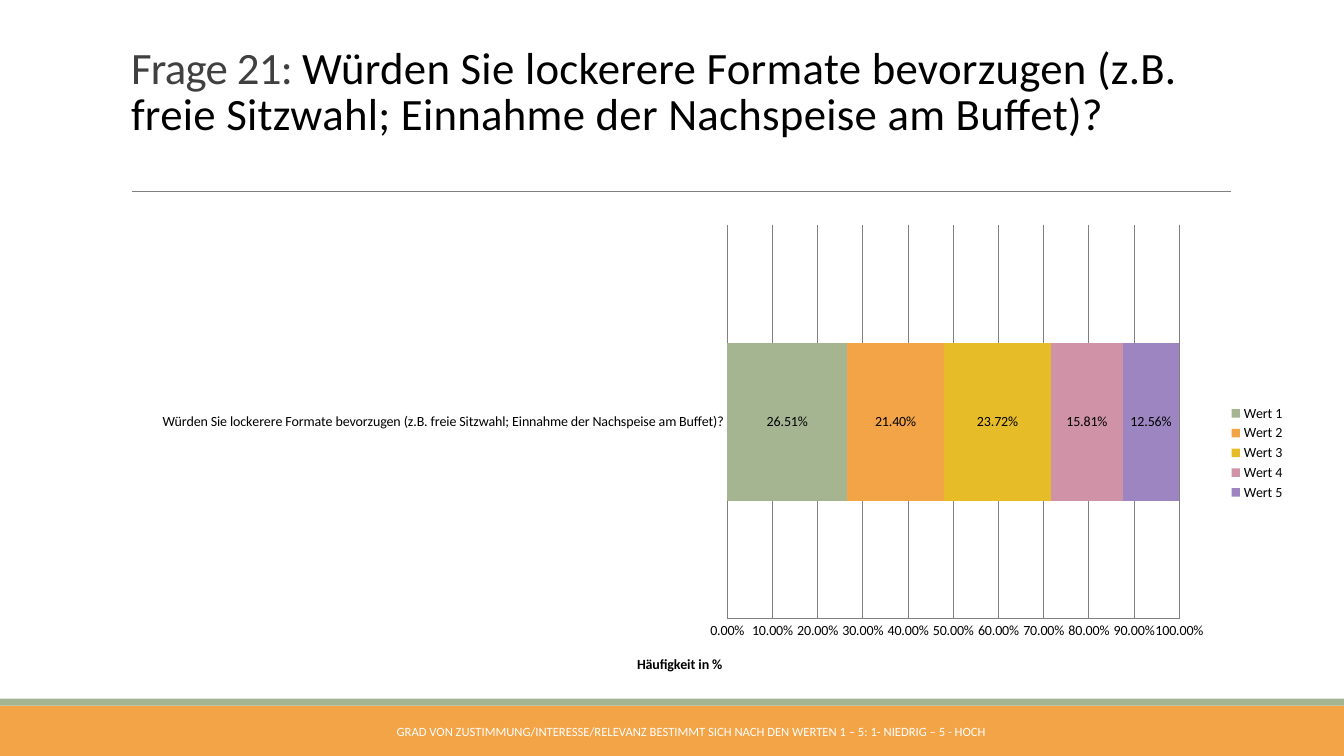
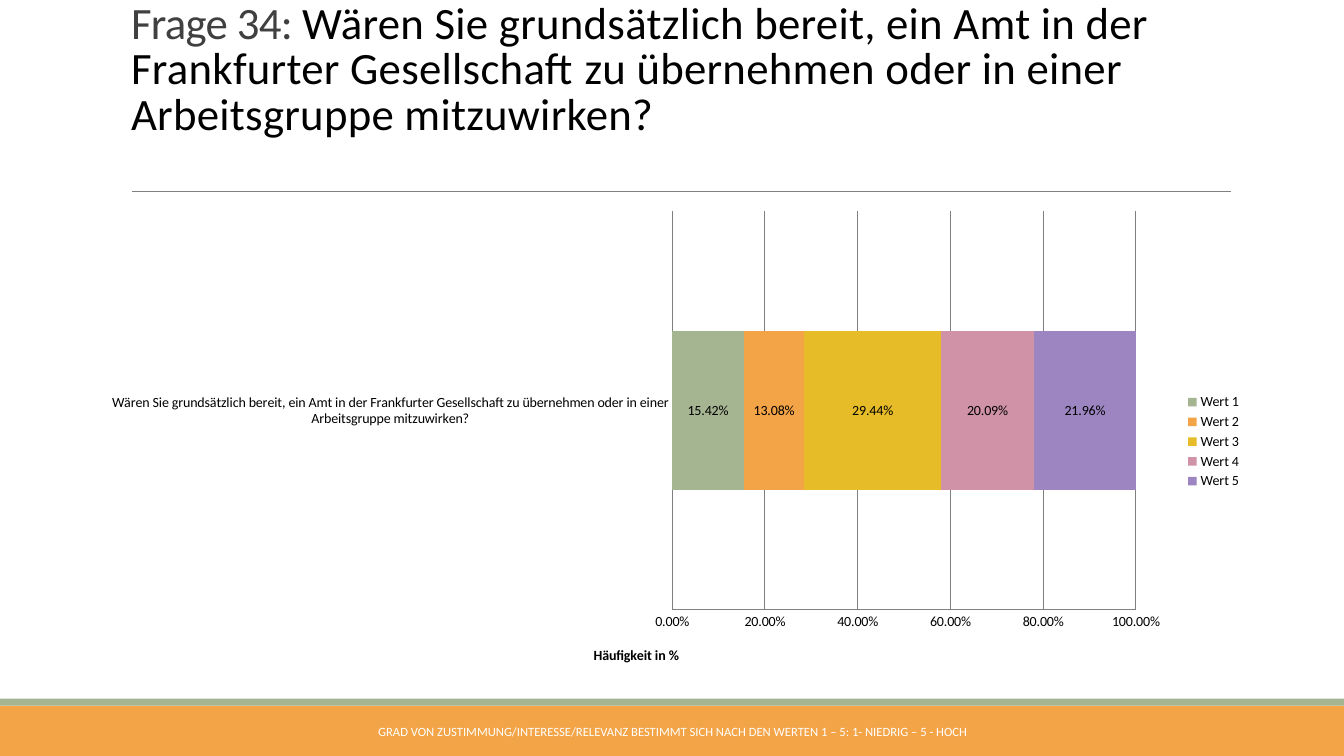
from lxml import etree
from pptx import Presentation
from pptx.chart.data import CategoryChartData
from pptx.dml.color import RGBColor
from pptx.enum.chart import XL_CHART_TYPE, XL_LEGEND_POSITION, XL_TICK_MARK
from pptx.enum.shapes import MSO_CONNECTOR, MSO_SHAPE
from pptx.enum.text import MSO_ANCHOR, MSO_AUTO_SIZE, PP_ALIGN
from pptx.oxml import parse_xml
from pptx.oxml.ns import nsdecls, qn
from pptx.util import Pt

STACKED = XL_CHART_TYPE.BAR_STACKED
RIGHT = XL_LEGEND_POSITION.RIGHT
NO_TICK = XL_TICK_MARK.NONE
RECT = MSO_SHAPE.RECTANGLE
STRAIGHT = MSO_CONNECTOR.STRAIGHT
BOTTOM, MIDDLE = MSO_ANCHOR.BOTTOM, MSO_ANCHOR.MIDDLE
NO_FIT = MSO_AUTO_SIZE.NONE
LEFT, CENTER = PP_ALIGN.LEFT, PP_ALIGN.CENTER

FONT = "Calibri"
WIDE, HIGH = 960, 540
COLORS = {
    "green": "A5B592", "orange": "F3A447", "yellow": "E7BC29",
    "pink": "D092A7", "purple": "9C85C0",
    "black": "000000", "dark": "404040", "gray": "808080", "white": "FFFFFF",
}
BARS = ["green", "orange", "yellow", "pink", "purple"]
NOTE = ("GRAD VON ZUSTIMMUNG/INTERESSE/RELEVANZ BESTIMMT SICH "
        "NACH DEN WERTEN 1 – 5: 1- NIEDRIG – 5 - HOCH")

# chart: left, top, width, height; plot: left and width as shares of the chart
PAGES = [
    {"label": "Frage 21: ",
     "ask": "Würden Sie lockerere Formate bevorzugen (z.B. freie Sitzwahl; "
            "Einnahme der Nachspeise am Buffet)?",
     "values": [0.2651, 0.214, 0.2372, 0.1581, 0.1256],
     "chart": (97.2, 154, 828, 339), "plot": (0.51, 0.39), "step": 0.1,
     "note": (255.6, 476)},
    {"label": "Frage 34: ",
     "ask": "Wären Sie grundsätzlich bereit, ein Amt in der Frankfurter "
            "Gesellschaft zu übernehmen oder in einer Arbeitsgruppe "
            "mitzuwirken?",
     "values": [0.1542, 0.1308, 0.2944, 0.2009, 0.2196],
     "chart": (66.2, 144, 828, 343), "plot": (0.5, 0.4), "step": 0.2,
     "note": (239.8, 481)},
]


def write(par, text, size=10, color="black", bold=False, space=0):
    run = par.add_run()
    run.text = text
    run.font.name = FONT
    run.font.size = Pt(size)
    run.font.bold = bold
    run.font.color.rgb = RGBColor.from_string(COLORS[color])
    if space:
        run.font._element.set("spc", str(round(space * 100)))


def place(owner, before, **spots):
    """Pin a chart part at shares of the chart, ahead of the named child."""
    for old in owner.findall(qn("c:layout")):
        owner.remove(old)
    modes = "".join(f'<c:{k}Mode val="edge"/>' for k in "xy")
    sizes = "".join(f'<c:{k} val="{v}"/>' for k, v in spots.items())
    target = '<c:layoutTarget val="inner"/>' if "w" in spots else ""
    frame = parse_xml(
        f'<c:layout {nsdecls("c")}><c:manualLayout>{target}{modes}{sizes}'
        "</c:manualLayout></c:layout>")
    owner.find(qn(before)).addprevious(frame)


prs = Presentation()
prs.slide_width, prs.slide_height = Pt(WIDE), Pt(HIGH)
layout = prs.slide_layouts[5]
slides = [prs.slides.add_slide(layout) for _ in PAGES]

# Bands and rule move from the first slide to the shared layout
shapes = slides[0].shapes
for top, height, color in [(504, 36, "orange"), (499, 5, "green")]:
    band = shapes.add_shape(RECT, 0, Pt(top), Pt(WIDE), Pt(height))
    band.shadow.inherit = False
    band.fill.solid()
    band.fill.fore_color.rgb = RGBColor.from_string(COLORS[color])
    band.line.fill.background()
    layout.shapes.element.append(band.element)
rule = shapes.add_connector(STRAIGHT, Pt(94.3), Pt(136.8), Pt(879), Pt(136.8))
rule.line.color.rgb = RGBColor.from_string(COLORS["gray"])
rule.line.width = Pt(0.5)
etree.SubElement(rule.element.spPr, qn("a:effectLst"))
layout.shapes.element.append(rule.element)

for slide, page in zip(slides, PAGES):
    title = slide.shapes.title
    title.left, title.top = Pt(86.4), Pt(22.3)
    title.width, title.height = Pt(792), Pt(114.5)
    frame = title.text_frame
    frame.word_wrap = True
    frame.auto_size = NO_FIT
    frame.vertical_anchor = BOTTOM
    frame.margin_bottom = Pt(37)
    par = frame.paragraphs[0]
    par.alignment = LEFT
    par.line_spacing = 0.85
    write(par, page["label"], size=32, color="dark", space=-0.5)
    write(par, page["ask"], size=32, space=0.2)

    data = CategoryChartData(number_format="0.00%")
    data.categories = [page["ask"]]
    for num, value in enumerate(page["values"], 1):
        data.add_series(f"Wert {num}", [value])
    spot = [Pt(n) for n in page["chart"]]
    chart = slide.shapes.add_chart(STACKED, *spot, data).chart
    chart.has_title = False
    chart.font.name = FONT
    chart.font.size = Pt(10)
    chart.font.color.rgb = RGBColor.from_string(COLORS["black"])
    chart.has_legend = True
    chart.legend.position = RIGHT
    chart.legend.include_in_layout = False

    plot = chart.plots[0]
    plot.gap_width, plot.overlap = 150, 100
    plot.vary_by_categories = False
    for bar, color in zip(plot.series, BARS):
        bar.format.fill.solid()
        bar.format.fill.fore_color.rgb = RGBColor.from_string(COLORS[color])
        labels = bar.data_labels
        labels.show_value = True
        labels.number_format = "0.00%"
        labels.number_format_is_linked = False

    axis = chart.value_axis
    axis.minimum_scale, axis.maximum_scale = 0, 1
    axis.major_unit = page["step"]
    axis.has_major_gridlines = True
    axis.tick_labels.number_format = "0.00%"
    axis.tick_labels.number_format_is_linked = False
    for side in (axis, chart.category_axis):
        side.major_tick_mark = side.minor_tick_mark = NO_TICK
        side.format.line.color.rgb = RGBColor.from_string(COLORS["gray"])
    axis.major_gridlines.format.line.color.rgb = RGBColor.from_string(
        COLORS["gray"])
    write(axis.axis_title.text_frame.paragraphs[0], "Häufigkeit in %",
          bold=True)
    place(axis.axis_title._element, "c:overlay", x=0.43, y=0.92)
    left, width = page["plot"]
    area = chart.element.find(".//" + qn("c:plotArea"))
    place(area, "c:barChart", x=left, y=0.02, w=width, h=0.83)

    left, width = page["note"]
    box = slide.shapes.add_textbox(Pt(left), Pt(508.3), Pt(width), Pt(28.8))
    box.text_frame.word_wrap = True
    box.text_frame.vertical_anchor = MIDDLE
    par = box.text_frame.paragraphs[0]
    par.alignment = CENTER
    write(par, NOTE, size=9, color="white")

prs.save("out.pptx")
